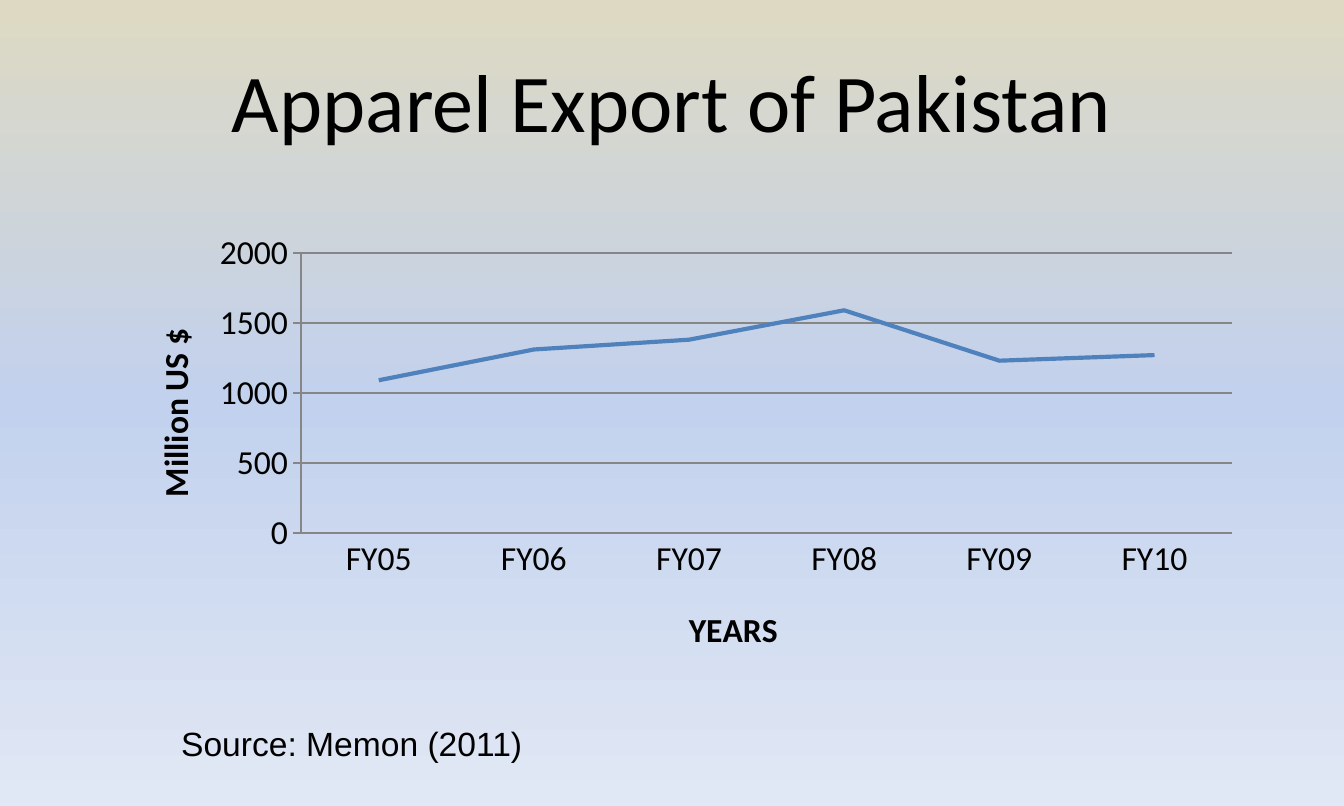
from lxml import etree
from pptx import Presentation
from pptx.chart.data import CategoryChartData
from pptx.dml.color import RGBColor
from pptx.enum import chart as charts, text
from pptx.oxml import ns, xmlchemy
from pptx.util import Pt

TITLE = "Apparel Export of Pakistan"
SOURCE = "Source: Memon (2011)"
EXPORTS = {"FY05": 1090, "FY06": 1310, "FY07": 1380,
           "FY08": 1590, "FY09": 1230, "FY10": 1270}
BACKGROUND = [(0, "DDD9C3"), (50, "C2D1ED"), (100, "E1E8F5")]

BLACK = RGBColor(0x00, 0x00, 0x00)
BLUE = RGBColor(0x4F, 0x81, 0xBD)
GREY = RGBColor(0x86, 0x86, 0x86)

# left, top, width, height in points
TITLE_BOX = (36, 17.28, 648, 72)
CHART_BOX = (59.76, 120.24, 612, 239.76)
SOURCE_BOX = (90, 383.76, 198.72, 28.8)

# fractions of the chart area
PLOT_LAYOUT = {"x": 0.166, "y": 0.064, "w": 0.815, "h": 0.626}
YEARS_LAYOUT = {"x": 0.5, "y": 0.84}
MILLION_LAYOUT = {"x": 0.03, "y": 0.22}


def apply_format(target, **values):
    for name, value in values.items():
        setattr(target, name, value)


def style_font(font, name, size, bold=False):
    apply_format(font, name=name, size=Pt(size), bold=bold)
    font.color.rgb = BLACK


def paint_background(page):
    """Fill the page with a top-to-bottom gradient."""
    page.background.fill.gradient()
    gradient = page.element.find(".//" + ns.qn("a:gradFill"))
    for child in list(gradient):
        gradient.remove(child)
    stops = etree.SubElement(gradient, ns.qn("a:gsLst"))
    for percent, color in BACKGROUND:
        stop = etree.SubElement(stops, ns.qn("a:gs"), pos=str(percent * 1000))
        etree.SubElement(stop, ns.qn("a:srgbClr"), val=color)
    etree.SubElement(gradient, ns.qn("a:lin"), ang="5400000", scaled="0")


def add_text(page, box, words, font_name, size, alignment, **frame_format):
    frame = page.shapes.add_textbox(*map(Pt, box)).text_frame
    apply_format(frame, **frame_format)
    para = frame.paragraphs[0]
    para.alignment = alignment
    span = para.add_run()
    span.text = words
    style_font(span.font, font_name, size)


def place(element, after, fractions):
    """Give a chart part a manual layout, put behind its child named after."""
    for old in element.findall(ns.qn("c:layout")):
        element.remove(old)
    layout = etree.Element(ns.qn("c:layout"))
    manual = etree.SubElement(layout, ns.qn("c:manualLayout"))
    settings = {"xMode": "edge", "yMode": "edge", **fractions}
    if "w" in fractions:
        settings = {"layoutTarget": "inner", **settings}
    for name, value in settings.items():
        etree.SubElement(manual, ns.qn("c:" + name), val=str(value))
    if after:
        element.find(ns.qn(after)).addnext(layout)
    else:
        element.insert(0, layout)


def style_axis(axis, title, layout, tick):
    axis.format.line.color.rgb = GREY
    axis.format.line.width = Pt(0.75)
    apply_format(axis, major_tick_mark=tick,
                 minor_tick_mark=charts.XL_TICK_MARK.NONE)
    style_font(axis.tick_labels.font, "Calibri", 18)
    span = axis.axis_title.text_frame.paragraphs[0].add_run()
    span.text = title
    style_font(span.font, "Calibri", 18, bold=True)
    place(axis.axis_title.format.line and axis.axis_title._element,
          "c:tx", layout)


def add_export_chart(page):
    data = CategoryChartData()
    data.categories = list(EXPORTS)
    data.add_series("Series 1", list(EXPORTS.values()))
    chart = page.shapes.add_chart(
        charts.XL_CHART_TYPE.LINE, *map(Pt, CHART_BOX), data).chart
    apply_format(chart, has_legend=False, has_title=False)
    style_font(chart.font, "Calibri", 18)

    plot = chart.plots[0]
    plot.vary_by_categories = False
    line = plot.series[0]
    line.smooth = False
    line.marker.style = charts.XL_MARKER_STYLE.NONE
    line.format.line.color.rgb = BLUE
    line.format.line.width = Pt(2.25)

    ticks = charts.XL_TICK_MARK
    style_axis(chart.category_axis, "YEARS", YEARS_LAYOUT, ticks.NONE)
    values = chart.value_axis
    style_axis(values, "Million US $", MILLION_LAYOUT, ticks.CROSS)
    apply_format(values, minimum_scale=0, maximum_scale=2000, major_unit=500,
                 has_major_gridlines=True)
    values.major_gridlines.format.line.color.rgb = GREY
    values.major_gridlines.format.line.width = Pt(0.75)
    values.axis_title.text_frame._txBody.bodyPr.set("rot", "-5400000")
    values.axis_title.text_frame._txBody.bodyPr.set("vert", "horz")
    place(chart.element.find(".//" + ns.qn("c:plotArea")), None, PLOT_LAYOUT) \
        if hasattr(chart, "element") else None


def main():
    deck = Presentation()
    apply_format(deck, slide_width=Pt(720), slide_height=Pt(432))
    page = deck.slides.add_slide(deck.slide_layouts[6])
    paint_background(page)
    add_text(page, TITLE_BOX, TITLE, "Calibri", 44, text.PP_ALIGN.CENTER,
             word_wrap=True, vertical_anchor=text.MSO_ANCHOR.MIDDLE)
    add_export_chart(page)
    add_text(page, SOURCE_BOX, SOURCE, "Arial", 18, text.PP_ALIGN.LEFT,
             word_wrap=False, auto_size=text.MSO_AUTO_SIZE.SHAPE_TO_FIT_TEXT)
    deck.save("out.pptx")


if __name__ == "__main__":
    main()
